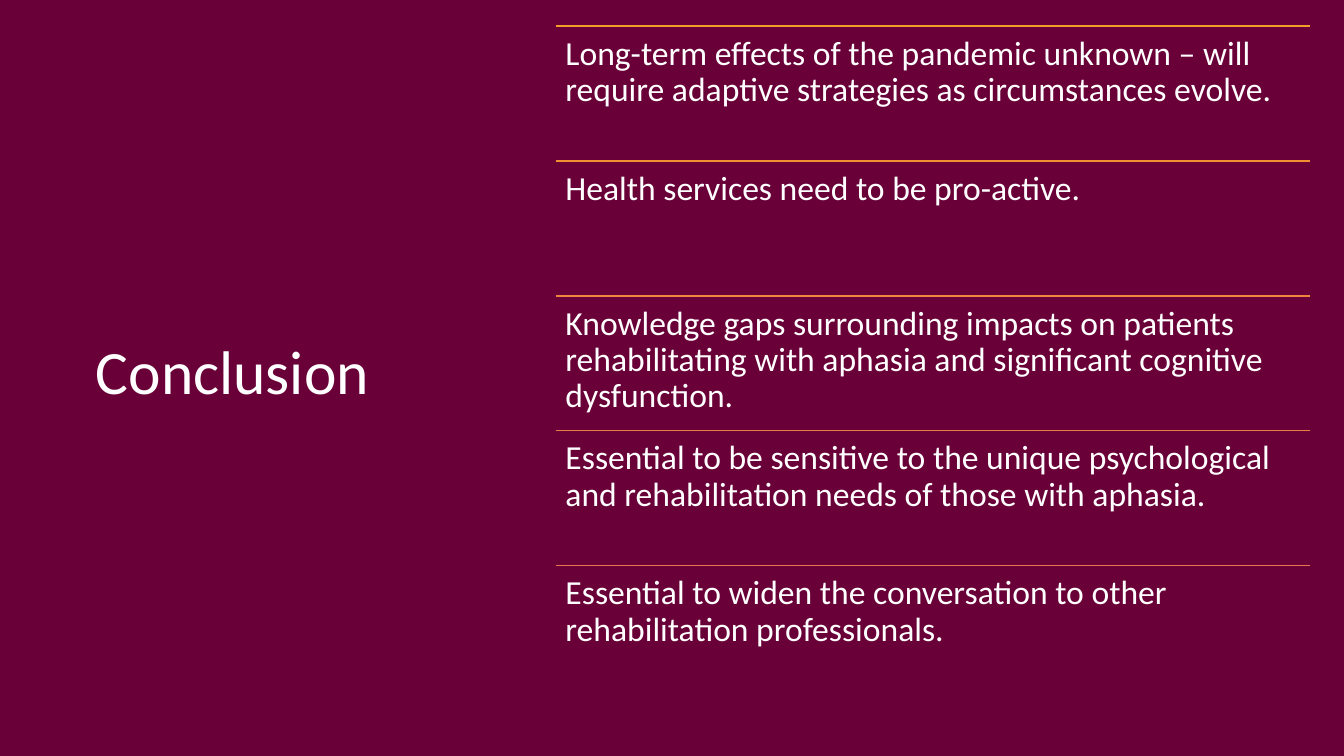
from lxml import etree
from pptx import Presentation
from pptx.dml.color import RGBColor
from pptx.enum.shapes import MSO_CONNECTOR, MSO_SHAPE
from pptx.enum.text import MSO_ANCHOR, MSO_AUTO_SIZE, PP_ALIGN
from pptx.oxml.ns import qn
from pptx.util import Inches, Pt

FONT = "Calibri"
WHITE = "FFFFFF"
BACKGROUND = "420023"
OVERLAY = "6E003B"

# Each conclusion with the colour of the rule above it
CONCLUSIONS = [
    ("Long-term effects of the pandemic unknown – will require adaptive "
     "strategies as circumstances evolve.", "F39E29"),
    ("Health services need to be pro-active.", "F09033"),
    ("Knowledge gaps surrounding impacts on patients rehabilitating with "
     "aphasia and significant cognitive dysfunction.", "ED853D"),
    ("Essential to be sensitive to the unique psychological and "
     "rehabilitation needs of those with aphasia.", "EA7B47"),
    ("Essential to widen the conversation to other rehabilitation "
     "professionals.", "E87450"),
]


def color(hex_string):
    return RGBColor.from_string(hex_string)


def write_text(text_frame, text, size):
    text_frame.word_wrap = True
    text_frame.auto_size = MSO_AUTO_SIZE.NONE
    paragraph = text_frame.paragraphs[0]
    paragraph.alignment = PP_ALIGN.LEFT
    paragraph.line_spacing = 0.9
    run = paragraph.add_run()
    run.text = text
    run.font.name = FONT
    run.font.size = Pt(size)
    run.font.color.rgb = color(WHITE)


def add_panel(slide, box, fill, opacity=100):
    left, top, width, height = map(Inches, box)
    panel = slide.shapes.add_shape(MSO_SHAPE.RECTANGLE, left, top, width, height)
    panel.shadow.inherit = False
    panel.fill.solid()
    panel.fill.fore_color.rgb = color(fill)
    panel.line.fill.background()
    if opacity < 100:
        fill_color = panel.fill._xPr.find(qn("a:solidFill"))[0]
        alpha = etree.SubElement(fill_color, qn("a:alpha"))
        alpha.set("val", str(opacity * 1000))


def add_background(slide, box):
    slide.background.fill.solid()
    slide.background.fill.fore_color.rgb = color(BACKGROUND)
    add_panel(slide, box, BACKGROUND)
    add_panel(slide, box, OVERLAY, 90)


def place_title(slide, box, text):
    title = slide.shapes.title
    title.left, title.top, title.width, title.height = map(Inches, box)
    title.text_frame.vertical_anchor = MSO_ANCHOR.MIDDLE
    write_text(title.text_frame, text, 44)
    # Bring the title in front of the background panels
    slide.shapes._spTree.append(title._element)


def add_rule(slide, left, top, width, line_color):
    rule = slide.shapes.add_connector(
        MSO_CONNECTOR.STRAIGHT,
        Inches(left), Inches(top), Inches(left + width), Inches(top))
    rule.line.color.rgb = color(line_color)
    rule.line.width = Pt(1)
    etree.SubElement(rule._element.spPr, qn("a:effectLst"))


def add_conclusions(slide, box, conclusions):
    left, top, width, height = box
    row_height = height / len(conclusions)
    for index, (text, line_color) in enumerate(conclusions):
        row_top = top + index * row_height
        add_rule(slide, left, row_top, width, line_color)
        text_box = slide.shapes.add_textbox(
            Inches(left), Inches(row_top), Inches(width), Inches(row_height))
        text_frame = text_box.text_frame
        text_frame.margin_left = text_frame.margin_right = Inches(0.1)
        text_frame.margin_top = text_frame.margin_bottom = Inches(0.1)
        text_frame.vertical_anchor = MSO_ANCHOR.TOP
        write_text(text_frame, text, 24)


def main():
    presentation = Presentation()
    presentation.slide_width = Inches(13.33)
    presentation.slide_height = Inches(7.5)
    slide = presentation.slides.add_slide(presentation.slide_layouts[5])

    add_background(slide, (0, 0, 13.33, 7.5))
    place_title(slide, (0.85, 0.54, 4.32, 6.36), "Conclusion")
    add_conclusions(slide, (5.51, 0.26, 7.48, 6.69), CONCLUSIONS)

    presentation.save("out.pptx")


if __name__ == "__main__":
    main()
